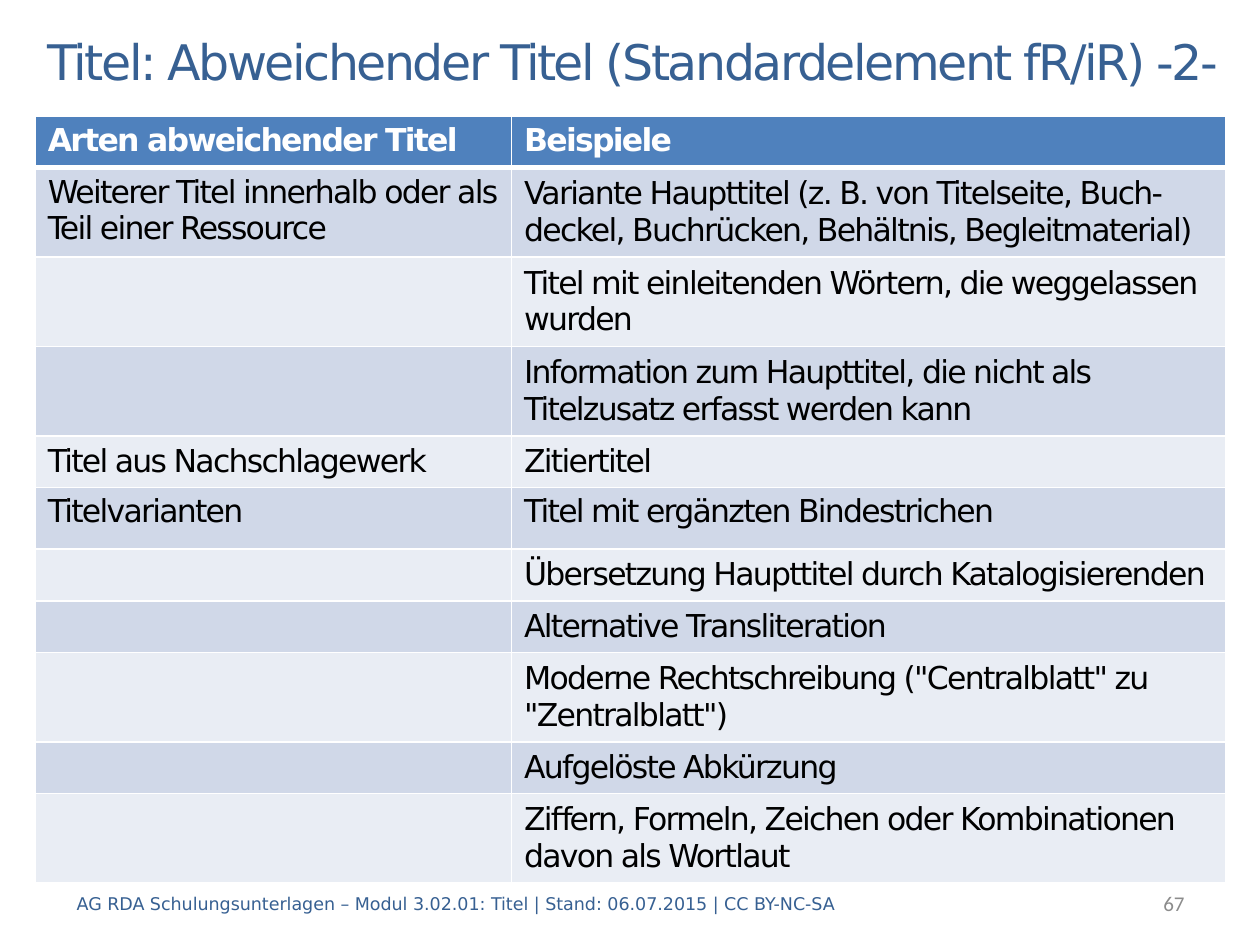
from lxml import etree
from pptx import Presentation
from pptx import util as u
from pptx.dml.color import RGBColor
from pptx.enum import text
from pptx.oxml.ns import qn

SANS = "DejaVu Sans"
BLUE = "376092"
MIDDLE, TOP = text.MSO_ANCHOR.MIDDLE, text.MSO_ANCHOR.TOP


def write(frame, words, size=18, color="000000", font=SANS, bold=False,
          spacing=0, align=text.PP_ALIGN.LEFT):
    frame.word_wrap = True
    para = frame.paragraphs[0]
    para.alignment = align
    span = para.add_run()
    span.text = words
    span.font.size = u.Pt(size)
    span.font.name = font
    span.font.bold = bold
    span.font.color.rgb = RGBColor.from_string(color)
    if spacing:
        span._r.get_or_add_rPr().set("spc", str(round(spacing * 100)))


def add_border(cell, side, width, color="FFFFFF"):
    line = etree.SubElement(cell._tc.get_or_add_tcPr(), qn(f"a:ln{side}"),
                            w=str(u.Pt(width)))
    fill = etree.SubElement(line, qn("a:solidFill"))
    etree.SubElement(fill, qn("a:srgbClr"), val=color)


deck = Presentation()
deck.slide_width, deck.slide_height = u.Inches(10), u.Inches(7.5)
page = deck.slides.add_slide(deck.slide_layouts[6])

# Title, page number and footer
labels = [
    ((0.28, 0.2, 9.72, 0.56), "Titel: Abweichender Titel (Standardelement fR/iR) -2-",
     dict(size=28, color=BLUE, spacing=-1.4)),
    ((7.91, 6.97, 1.59, 0.4), "67",
     dict(size=12, color="8C8C8C", font="Calibri", align=text.PP_ALIGN.RIGHT)),
    ((0.51, 6.97, 6.69, 0.4),
     "AG RDA Schulungsunterlagen – Modul 3.02.01: Titel | Stand: 06.07.2015 | CC BY-NC-SA",
     dict(size=10, color=BLUE)),
]
for place, words, style in labels:
    box = page.shapes.add_textbox(*map(u.Inches, place))
    box.text_frame.vertical_anchor = MIDDLE
    write(box.text_frame, words, **style)

# Table: row height, kind of title, example, anchors of both cells
rows = [
    (0.41, "Arten abweichender Titel", "Beispiele", TOP, TOP),
    (0.71, "Weiterer Titel innerhalb oder als Teil einer Ressource",
     "Variante Haupttitel (z. B. von Titelseite, Buch-deckel, Buchrücken, "
     "Behältnis, Begleitmaterial)", TOP, MIDDLE),
    (0.71, "", "Titel mit einleitenden Wörtern, die weggelassen wurden", TOP, MIDDLE),
    (0.71, "", "Information zum Haupttitel, die nicht als Titelzusatz erfasst werden kann",
     TOP, MIDDLE),
    (0.41, "Titel aus Nachschlagewerk", "Zitiertitel", MIDDLE, MIDDLE),
    (0.49, "Titelvarianten", "Titel mit ergänzten Bindestrichen", TOP, TOP),
    (0.41, "", "Übersetzung Haupttitel durch Katalogisierenden", TOP, MIDDLE),
    (0.41, "", "Alternative Transliteration", TOP, MIDDLE),
    (0.71, "", 'Moderne Rechtschreibung ("Centralblatt" zu "Zentralblatt")', TOP, MIDDLE),
    (0.41, "", "Aufgelöste Abkürzung", TOP, MIDDLE),
    (0.71, "", "Ziffern, Formeln, Zeichen oder Kombinationen davon als Wortlaut",
     TOP, MIDDLE),
]
table = page.shapes.add_table(len(rows), 2, u.Inches(0.28), u.Inches(0.92),
                              u.Inches(9.45), u.Inches(6.06)).table
for column, width in zip(table.columns, (3.78, 5.67)):
    column.width = u.Inches(width)

for r, (height, kind, example, *anchors) in enumerate(rows):
    table.rows[r].height = u.Inches(height)
    header = r == 0
    fill = "4F81BD" if header else ("E9EDF4", "D0D8E8")[r % 2]
    for c, words in enumerate((kind, example)):
        cell = table.cell(r, c)
        cell.vertical_anchor = anchors[c]
        # The rule under the header is thicker than the others
        widths = {"L": 1, "R": 1, "T": 3 if r == 1 else 1, "B": 3 if header else 1}
        for side, width in widths.items():
            add_border(cell, side, width)
        cell.fill.solid()
        cell.fill.fore_color.rgb = RGBColor.from_string(fill)
        if words:
            write(cell.text_frame, words, color="FFFFFF" if header else "000000",
                  bold=header, spacing=-1)

deck.save("out.pptx")
